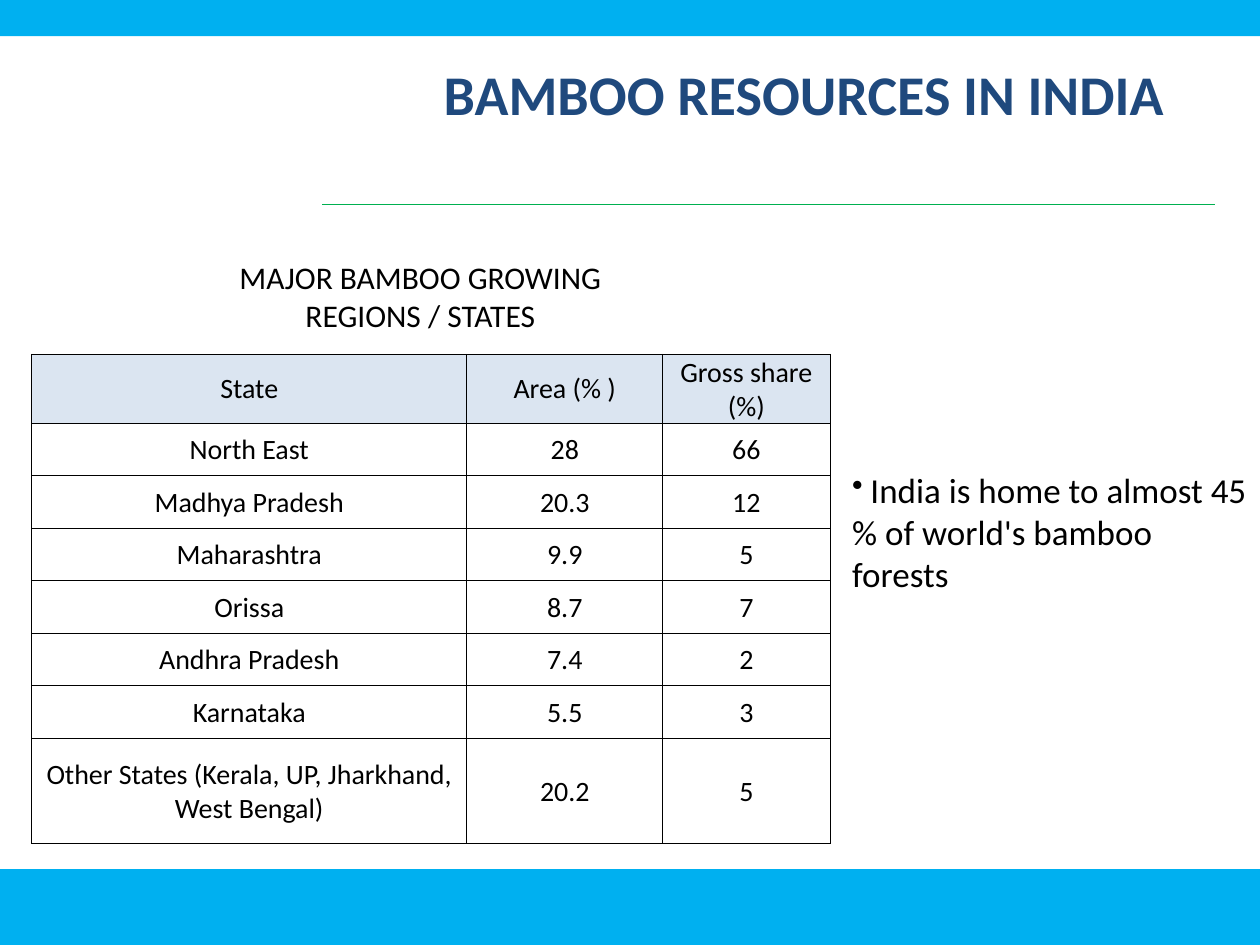
from lxml import etree
from pptx import Presentation
from pptx import util as u
from pptx.dml.color import RGBColor
from pptx.enum import shapes, text
from pptx.oxml import ns

SKY = RGBColor(0x00, 0xB0, 0xF0)
GREEN = RGBColor(0x00, 0xB0, 0x50)
NAVY = RGBColor(0x1F, 0x49, 0x7D)
PALE = RGBColor(0xDB, 0xE5, 0xF1)
WHITE = RGBColor(0xFF, 0xFF, 0xFF)
BLACK = RGBColor(0x00, 0x00, 0x00)
FONT = "Calibri"

WIDTH, HEIGHT = u.Cm(25.4), u.Cm(19.05)
COLUMNS = [8.77, 3.95, 3.37]
ROWS = [1.36] + [1.06] * 6 + [2.12]
STATES = [
    ("State", "Area (% )", "Gross share (%)"),
    ("North East", "28", "66"),
    ("Madhya Pradesh", "20.3", "12"),
    ("Maharashtra", "9.9", "5"),
    ("Orissa", "8.7", "7"),
    ("Andhra Pradesh", "7.4", "2"),
    ("Karnataka", "5.5", "3"),
    ("Other States (Kerala, UP, Jharkhand, West Bengal)", "20.2", "5"),
]


def add_band(page, top, height):
    band = page.shapes.add_shape(shapes.MSO_SHAPE.RECTANGLE, 0, top, WIDTH, height)
    band.shadow.inherit = False
    band.fill.solid()
    band.fill.fore_color.rgb = SKY
    band.line.fill.background()


def add_rule(page, left, right, y):
    rule = page.shapes.add_connector(shapes.MSO_CONNECTOR.STRAIGHT, left, y, right, y)
    rule.line.color.rgb = GREEN
    rule.line.width = u.Pt(0.75)
    etree.SubElement(rule._element.spPr, ns.qn("a:effectLst"))


def add_span(para, words, size, color=BLACK, bold=False):
    span = para.add_run()
    span.text = words
    span.font.name = FONT
    span.font.size = u.Pt(size)
    span.font.bold = bold
    span.font.color.rgb = color


def add_bullet(para):
    bullet = etree.SubElement(para._p.get_or_add_pPr(), ns.qn("a:buChar"))
    bullet.set("char", "•")


def add_text(page, place, lines, align, color=BLACK, bold=False, bullet=False):
    box = page.shapes.add_textbox(*[u.Cm(length) for length in place])
    frame = box.text_frame
    frame.word_wrap = True
    for index, spans in enumerate(lines):
        para = frame.add_paragraph() if index else frame.paragraphs[0]
        para.alignment = align
        if bullet:
            add_bullet(para)
        for words, size in spans:
            add_span(para, words, size, color, bold)


def add_borders(cell):
    properties = cell._tc.get_or_add_tcPr()
    for side in ("lnL", "lnR", "lnT", "lnB"):
        border = etree.SubElement(properties, ns.qn(f"a:{side}"), w=str(u.Pt(0.5)))
        fill = etree.SubElement(border, ns.qn("a:solidFill"))
        etree.SubElement(fill, ns.qn("a:srgbClr"), val=str(BLACK))


def fill_cell(cell, words, color):
    add_borders(cell)
    cell.fill.solid()
    cell.fill.fore_color.rgb = color
    cell.vertical_anchor = text.MSO_ANCHOR.MIDDLE
    cell.margin_left = cell.margin_right = cell.margin_top = u.Cm(0.03)
    cell.margin_bottom = 0
    para = cell.text_frame.paragraphs[0]
    para.alignment = text.PP_ALIGN.CENTER
    add_span(para, words, 16)


def add_states_table(page, left, top):
    frame = page.shapes.add_table(
        len(ROWS), len(COLUMNS), left, top, u.Cm(sum(COLUMNS)), u.Cm(sum(ROWS))
    )
    table = frame.table
    for column, width in zip(table.columns, COLUMNS):
        column.width = u.Cm(width)
    for index, (row, height) in enumerate(zip(table.rows, ROWS)):
        row.height = u.Cm(height)
        for cell, words in zip(row.cells, STATES[index]):
            fill_cell(cell, words, WHITE if index else PALE)


def main():
    deck = Presentation()
    deck.slide_width, deck.slide_height = WIDTH, HEIGHT
    page = deck.slides.add_slide(deck.slide_layouts[6])
    center, left = text.PP_ALIGN.CENTER, text.PP_ALIGN.LEFT

    add_band(page, u.Cm(17.52), HEIGHT - u.Cm(17.52))
    add_rule(page, u.Cm(6.5), u.Cm(24.5), u.Cm(4.12))
    add_band(page, 0, u.Cm(0.73))
    add_text(
        page,
        (3.61, 5.08, 9.73, 3.17),
        [[("MAJOR BAMBOO GROWING", 18)], [("REGIONS / STATES", 18)]],
        center,
    )
    add_text(
        page,
        (16.93, 9.31, 8.47, 3.68),
        [[(" ", 18), ("India is home to almost 45 % of world's bamboo forests", 20)]],
        left,
        bullet=True,
    )
    add_text(
        page,
        (8.69, 1.07, 15.04, 1.63),
        [[("BAMBOO RESOURCES IN INDIA", 32)]],
        center,
        NAVY,
        bold=True,
    )
    add_states_table(page, u.Cm(0.64), u.Cm(7.14))
    deck.save("out.pptx")


if __name__ == "__main__":
    main()
